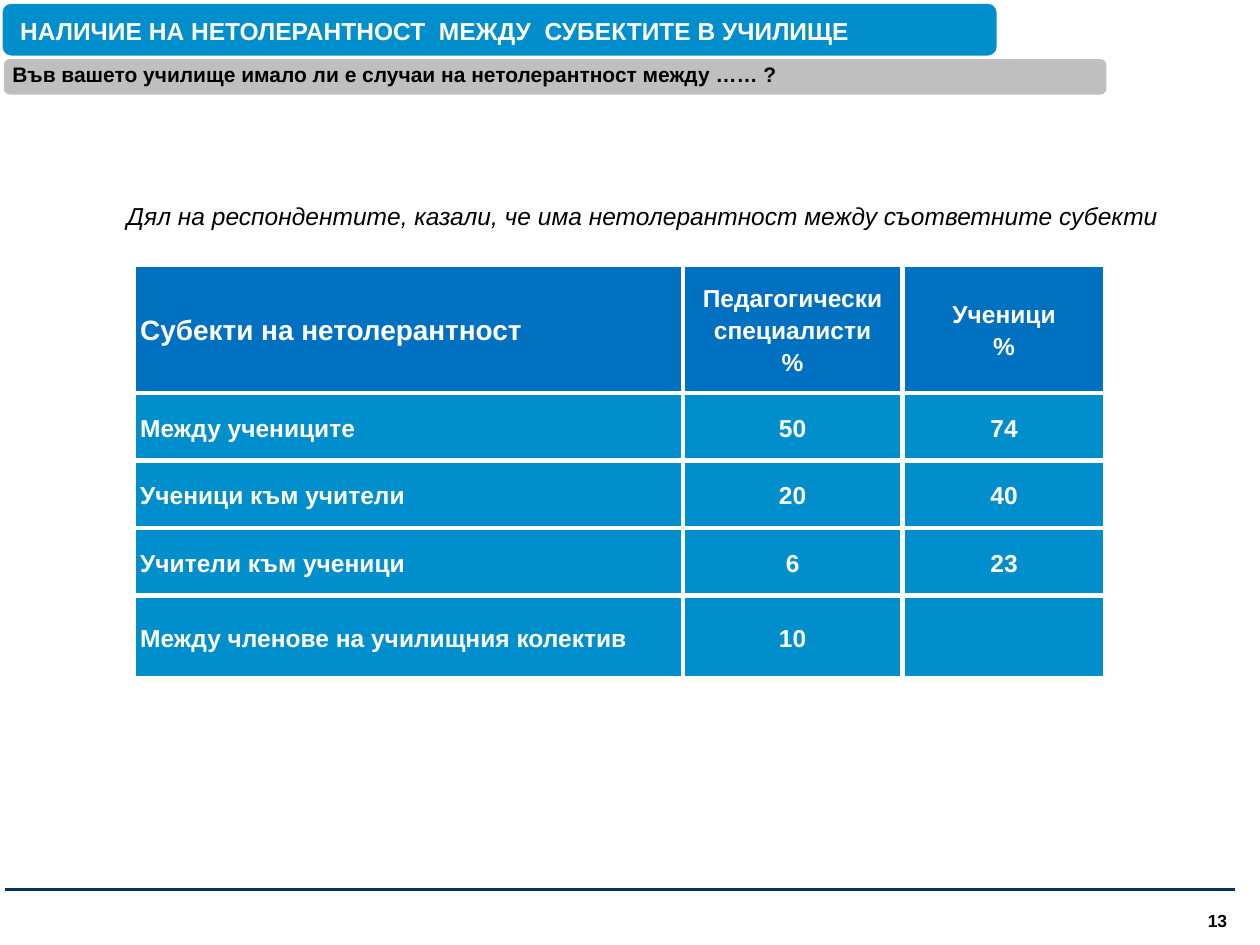
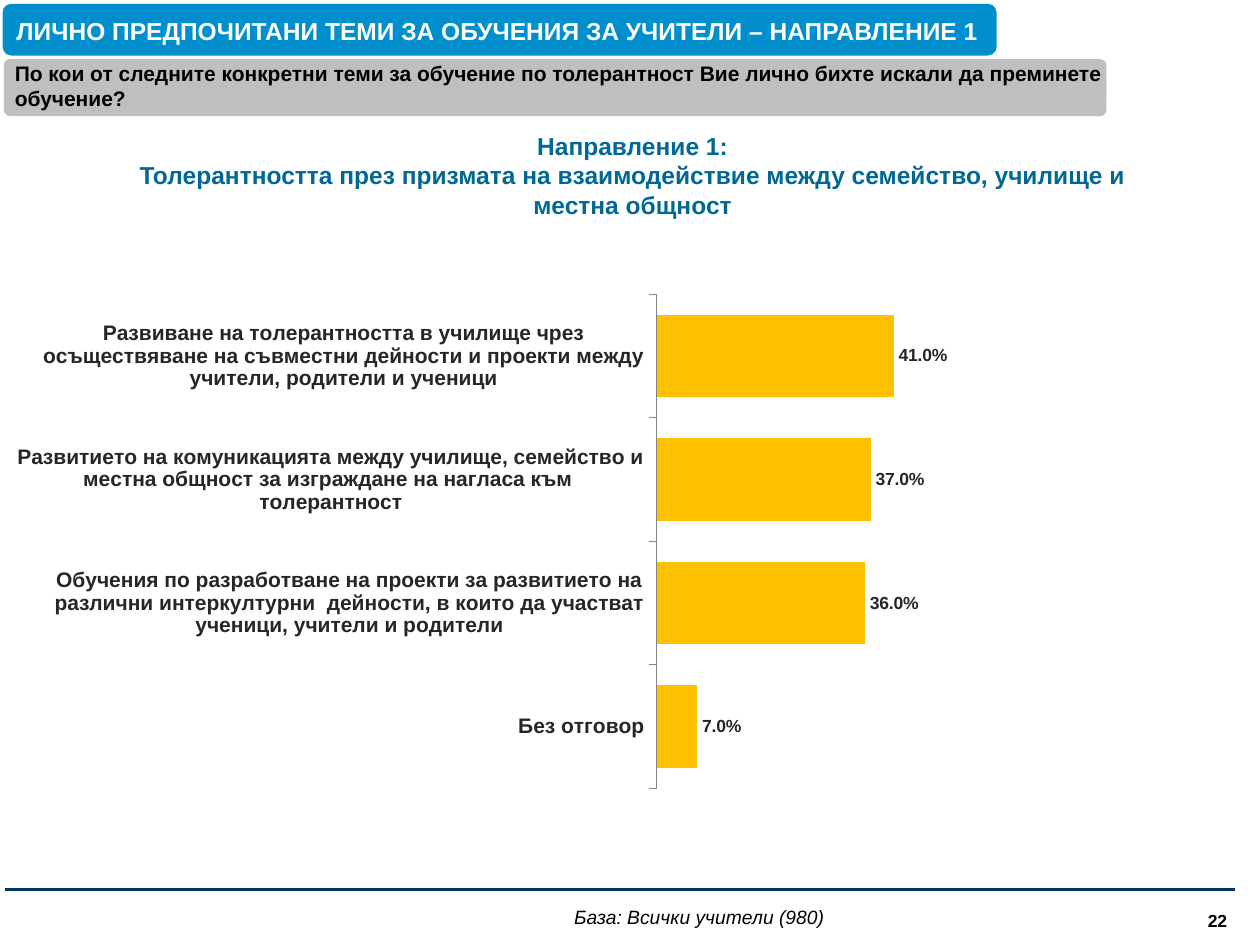
from lxml import etree
from pptx import Presentation
from pptx.chart.data import CategoryChartData
from pptx.dml.color import RGBColor
from pptx.enum.chart import XL_CHART_TYPE, XL_LABEL_POSITION, XL_TICK_LABEL_POSITION, XL_TICK_MARK
from pptx.enum.shapes import MSO_CONNECTOR, MSO_SHAPE
from pptx.enum.text import MSO_ANCHOR, MSO_AUTO_SIZE, PP_ALIGN
from pptx.oxml import parse_xml
from pptx.oxml.ns import nsdecls, qn
from pptx.util import Pt

BAR = XL_CHART_TYPE.BAR_CLUSTERED
OUTSIDE_END = XL_LABEL_POSITION.OUTSIDE_END
LOW = XL_TICK_LABEL_POSITION.LOW
TICK_OUT = XL_TICK_MARK.OUTSIDE
TICK_NONE = XL_TICK_MARK.NONE
STRAIGHT = MSO_CONNECTOR.STRAIGHT
BAND = MSO_SHAPE.FLOWCHART_ALTERNATE_PROCESS
TOP, MIDDLE = MSO_ANCHOR.TOP, MSO_ANCHOR.MIDDLE
NO_FIT = MSO_AUTO_SIZE.NONE
LEFT, CENTER = PP_ALIGN.LEFT, PP_ALIGN.CENTER

FONT = "Arial"
WHITE, BLACK, INK = "FFFFFF", "000000", "262626"
BLUE, HEADER_BLUE, TEAL, NAVY = "008FCC", "0070C0", "006896", "003366"
GREY, AXIS_GREY, AMBER = "BFBFBF", "868686", "FFC000"
TITLE_BAND = (1.5, 2.2, 568, 29.5)
QUESTION_BAND = (2.2, 33.8, 630, 20.2)


def rgb(value):
    return RGBColor.from_string(value)


def points(box):
    return [Pt(v) for v in box]


def style_font(font, size, color, bold=False, italic=False):
    font.name = FONT
    font.size = Pt(size)
    font.bold = bold
    font.italic = italic
    font.color.rgb = rgb(color)


def write(tf, text, size, color, align=LEFT, spacing=1.0, **style):
    tf.text = text
    tf.word_wrap = True
    for p in tf.paragraphs:
        p.alignment = align
        p.line_spacing = spacing
        for r in p.runs:
            style_font(r.font, size, color, **style)


def add_text(s, box, text, size, color=BLACK, align=LEFT, **style):
    tf = s.shapes.add_textbox(*points(box)).text_frame
    write(tf, text, size, color, align, **style)


def add_band(s, box, color):
    sp = s.shapes.add_shape(BAND, *points(box))
    sp.shadow.inherit = False
    sp.fill.solid()
    sp.fill.fore_color.rgb = rgb(color)
    sp.line.fill.background()


def add_title(s, box, text):
    title = s.shapes.title
    title.left, title.top, title.width, title.height = points(box)
    tf = title.text_frame
    tf.auto_size = NO_FIT
    tf.vertical_anchor = TOP
    write(tf, text, 14, WHITE, bold=True)
    title.element.getparent().append(title.element)


def add_footer(s, box, number):
    x, y, w, h = box
    rule = s.shapes.add_connector(STRAIGHT, *points((x, y, x + w, y)))
    rule.line.color.rgb = rgb(NAVY)
    rule.line.width = Pt(1.75)
    etree.SubElement(rule.element.spPr, qn("a:effectLst"))
    add_text(s, (x + w - 22.5, y + 8, 28, h - 8), number, 10, bold=True)


def new_slide(prs, title, title_left, number):
    s = prs.slides.add_slide(prs.slide_layouts[5])
    add_band(s, TITLE_BAND, BLUE)
    add_band(s, QUESTION_BAND, GREY)
    add_footer(s, (2.9, 508.3, 702.7, 27.5), number)
    add_title(s, (title_left, 5.8, 618, 24.5), title)
    return s


def fill_cell(cell, text, size, color, align):
    tc_pr = cell._tc.get_or_add_tcPr()
    for side in ("lnL", "lnR", "lnT", "lnB"):
        tc_pr.append(parse_xml(
            f'<a:{side} {nsdecls("a")} w="{Pt(3)}"><a:solidFill>'
            f'<a:srgbClr val="{WHITE}"/></a:solidFill></a:{side}>'))
    cell.fill.solid()
    cell.fill.fore_color.rgb = rgb(color)
    cell.vertical_anchor = MIDDLE
    cell.margin_left = cell.margin_right = Pt(3.6)
    cell.margin_top = cell.margin_bottom = 0
    write(cell.text_frame, text, size, WHITE, align, 1.15, bold=True)


def add_share_table(s, box, rows, widths, heights):
    table = s.shapes.add_table(len(rows), len(widths), *points(box)).table
    for column, width in zip(table.columns, widths):
        column.width = Pt(width)
    for row, height in zip(table.rows, heights):
        row.height = Pt(height)
    for i, texts in enumerate(rows):
        for j, text in enumerate(texts):
            fill_cell(table.cell(i, j), text, 16 if i == j == 0 else 14,
                      BLUE if i else HEADER_BLUE, CENTER if j else LEFT)


def set_plot_area(chart, x, y, w, h):
    plot_area = chart._chartSpace.chart.plotArea
    for old in plot_area.findall(qn("c:layout")):
        plot_area.remove(old)
    parts = {"layoutTarget": "inner", "xMode": "edge", "yMode": "edge",
             "x": x, "y": y, "w": w, "h": h}
    inner = "".join(f'<c:{tag} val="{val}"/>' for tag, val in parts.items())
    plot_area.insert(0, parse_xml(
        f'<c:layout {nsdecls("c")}><c:manualLayout>{inner}</c:manualLayout></c:layout>'))


def add_topic_chart(s, box, topics):
    data = CategoryChartData(number_format="0.0%")
    data.categories = [topic for topic, _ in topics]
    data.add_series("Series 1", [share for _, share in topics])
    chart = s.shapes.add_chart(BAR, *points(box), data).chart
    chart.has_legend = chart.has_title = False
    style_font(chart.font, 18, BLACK)
    set_plot_area(chart, 0.522, 0.021, 0.47, 0.959)

    plot = chart.plots[0]
    plot.gap_width = 50
    plot.vary_by_categories = False
    bars = plot.series[0].format.fill
    bars.solid()
    bars.fore_color.rgb = rgb(AMBER)
    plot.has_data_labels = True
    labels = plot.data_labels
    labels.show_value = True
    labels.number_format = "0.0%"
    labels.number_format_is_linked = False
    labels.position = OUTSIDE_END
    style_font(labels.font, 10, INK, bold=True)

    topic_axis = chart.category_axis
    topic_axis.reverse_order = True
    topic_axis.major_tick_mark = TICK_OUT
    topic_axis.minor_tick_mark = TICK_NONE
    topic_axis.tick_label_position = LOW
    topic_axis.format.line.color.rgb = rgb(AXIS_GREY)
    style_font(topic_axis.tick_labels.font, 12, INK, bold=True)
    share_axis = chart.value_axis
    share_axis.minimum_scale, share_axis.maximum_scale = 0, 1
    share_axis.has_major_gridlines = False
    share_axis.visible = False


def build_intolerance_slide(prs):
    s = new_slide(prs, "НАЛИЧИЕ НА НЕТОЛЕРАНТНОСТ  МЕЖДУ  СУБЕКТИТЕ В УЧИЛИЩЕ", 4.3, "13")
    add_text(s, (0, 31.7, 689, 21.6),
             "Във вашето училище имало ли е случаи на нетолерантност между …… ?", 12, bold=True)
    add_text(s, (44, 111.6, 646.5, 24.5),
             "Дял на респондентите, казали, че има нетолерантност между съответните субекти",
             14, align=CENTER, italic=True)
    rows = [
        ("Субекти на нетолерантност", "Педагогически\nспециалисти\n%", "Ученици\n%"),
        ("Между учениците", "50", "74"),
        ("Ученици към учители", "20", "40"),
        ("Учители към ученици", "6", "23"),
        ("Между членове на училищния колектив", "10", ""),
    ]
    add_share_table(s, (76.5, 151.2, 555.4, 236.7), rows,
                    (313.7, 125.5, 116.2), (73.4, 38.6, 38.6, 38.6, 47.5))


def build_topics_slide(prs):
    s = new_slide(prs, "ЛИЧНО ПРЕДПОЧИТАНИ ТЕМИ ЗА ОБУЧЕНИЯ ЗА УЧИТЕЛИ – НАПРАВЛЕНИЕ 1", 2.2, "22")
    x, y, w, h = QUESTION_BAND
    add_band(s, (x, y + 12.3, w, h), GREY)
    add_text(s, (1.4, 31, 689, 36),
             "По кои от следните конкретни теми за обучение по толерантност "
             "Вие лично бихте искали да преминете обучение?", 12, bold=True)
    add_text(s, (11.5, 71.3, 700, 58.3),
             "Направление 1:\n"
             "Толерантността през призмата на взаимодействие между семейство, училище и\n"
             "местна общност", 14, TEAL, CENTER, bold=True)
    topics = [
        ("Развиване на толерантността в училище чрез осъществяване на съвместни "
         "дейности и проекти между учители, родители и ученици", 0.41),
        ("Развитието на комуникацията между училище, семейство и местна общност "
         "за изграждане на нагласа към  толерантност", 0.37),
        ("Обучения по разработване на проекти за развитието на различни интеркултурни  "
         "дейности, в които да участват ученици, учители и родители", 0.36),
        ("Без отговор", 0.07),
    ]
    add_topic_chart(s, (8.6, 162, 702.7, 294.5), topics)
    add_text(s, (77.8, 514, 643.7, 20.9), "База: Всички учители (980)", 11,
             align=CENTER, italic=True)


def main():
    prs = Presentation()
    prs.slide_width, prs.slide_height = Pt(720), Pt(540)
    build_intolerance_slide(prs)
    build_topics_slide(prs)
    prs.save("out.pptx")


if __name__ == "__main__":
    main()
